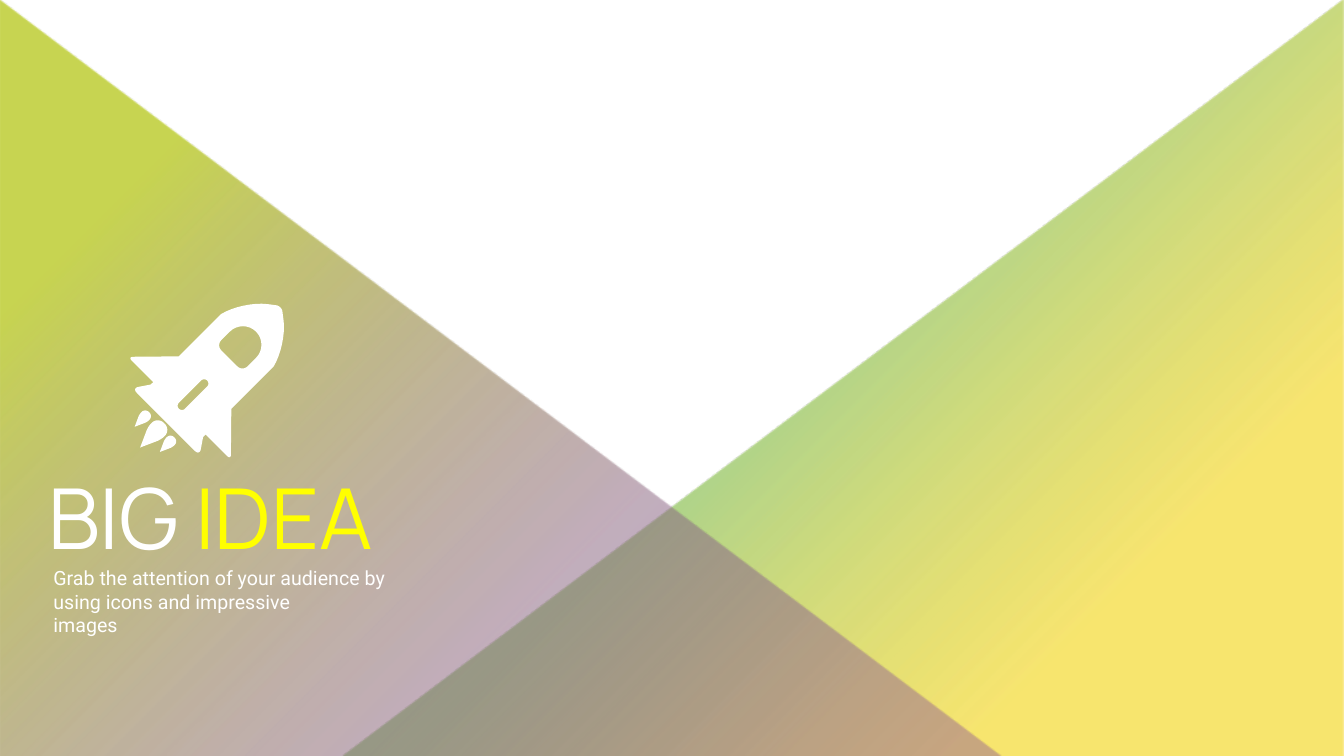
from dataclasses import dataclass
from math import dist

from lxml import etree
from pptx import Presentation
from pptx.dml.color import RGBColor
from pptx.enum.shapes import MSO_SHAPE
from pptx.enum.text import MSO_ANCHOR, MSO_AUTO_SIZE
from pptx.oxml.ns import qn
from pptx.util import Pt

TRIANGLE = MSO_SHAPE.RIGHT_TRIANGLE
BOTTOM, TOP = MSO_ANCHOR.BOTTOM, MSO_ANCHOR.TOP
FIT_SHAPE, FIT_NONE = MSO_AUTO_SIZE.SHAPE_TO_FIT_TEXT, MSO_AUTO_SIZE.NONE

WHITE = RGBColor(0xFF, 0xFF, 0xFF)
BRIGHT_YELLOW = RGBColor(0xFF, 0xFF, 0x00)
GOLD = RGBColor(0xF3, 0xD2, 0x0A)
BLUE = RGBColor(0x00, 0xB0, 0xF0)
PURPLE = RGBColor(0x70, 0x30, 0xA0)
LIME = RGBColor(0xC0, 0xCF, 0x3A)

SLIDE_W, SLIDE_H = 960, 540
TRIANGLE_W = 715.4
INSET = Pt(7.2)

AXIS_ORIGIN = 209.88  # x and y of the point the rocket's 45° axis starts from
ROCKET_UNIT = 0.36    # x and y step of one rocket unit
ARC_STEPS = 8         # straight pieces per rounded corner
ARC_PULL = 0.55       # Bezier handle length that makes a round corner


@dataclass
class Stop:
    position: float
    color: RGBColor
    opacity: int


@dataclass
class Triangle:
    left: float
    flipped: bool
    stops: list[Stop]


@dataclass
class Run:
    text: str
    color: RGBColor = WHITE


@dataclass
class TextBlock:
    box: tuple[float, float, float, float]
    paragraphs: list[list[Run]]
    font: dict
    frame: dict
    spacing: float = 1.0


@dataclass
class Corner:
    along: float      # forward on the rocket's axis
    across: float     # sideways from the axis
    reach: float = 0  # how far the rounding runs along each side


@dataclass
class Flame:
    front: float
    across: float
    scale: float


TRIANGLES = [
    Triangle(SLIDE_W - TRIANGLE_W, True, [Stop(0.22, GOLD, 58), Stop(1, BLUE, 100)]),
    Triangle(0, False, [Stop(0.12, PURPLE, 34), Stop(0.82, LIME, 88)]),
]
TEXTS = [
    TextBlock((27.4, 337, 264.2, 75.6),
              [[Run("BIG "), Run("IDEA", BRIGHT_YELLOW)]],
              {"name": "Manrope", "size": Pt(60)},
              {"vertical_anchor": BOTTOM, "auto_size": FIT_NONE,
               "margin_left": INSET, "margin_right": INSET,
               "margin_top": INSET, "margin_bottom": INSET},
              0.9),
    TextBlock((31, 400.7, 279.4, 58.3),
              [[Run("Grab the attention of your audience by using icons and impressive")],
               [Run("images")]],
              {"name": "Roboto", "size": Pt(14)},
              {"vertical_anchor": TOP, "auto_size": FIT_SHAPE}),
]

# One half of each rocket part; the other half is its mirror image
TIP, NOSE, SHOULDER = Corner(-24, 0, 8), Corner(-58, -44, 35), Corner(-92, -52)
FIN_ROOT, FIN_TIP, FIN_END = Corner(-176, -52), Corner(-227, -102, 7), Corner(-227, -52)
NOZZLE_ROOT, NOZZLE_TIP = Corner(-232, -52), Corner(-254, -67, 9)
HULL = [TIP, NOSE, SHOULDER, FIN_ROOT, FIN_TIP, FIN_END, NOZZLE_ROOT, NOZZLE_TIP]
WINDOW = [Corner(-75, -26, 26), Corner(-128, -26, 10)]
SLOT = [Corner(-172, -6, 6), Corner(-228, -6, 6)]
FLAME = [Corner(0, -13, 12), Corner(-19, -13, 6), Corner(-48, 0)]
FLAMES = [Flame(-257, 0, 1), Flame(-261, -26, 0.6), Flame(-261, 24, 0.6)]


def set_format(target, values: dict) -> None:
    for name, value in values.items():
        setattr(target, name, value)


def add_triangle(s, tri: Triangle) -> None:
    sp = s.shapes.add_shape(TRIANGLE, Pt(tri.left), 0, Pt(TRIANGLE_W), Pt(SLIDE_H))
    sp.shadow.inherit = False
    sp.line.fill.background()
    if tri.flipped:
        sp._element.spPr.xfrm.set("flipH", "1")
    sp.fill.gradient()
    grad = sp._element.spPr.find(qn("a:gradFill"))
    for stop, wanted in zip(sp.fill.gradient_stops, tri.stops):
        set_format(stop, {"position": wanted.position})
        stop.color.rgb = wanted.color
    for color, wanted in zip(grad.iter(qn("a:srgbClr")), tri.stops):
        etree.SubElement(color, qn("a:alpha"), val=str(wanted.opacity * 1000))
    # Spread the colours from the bottom right corner
    grad.remove(grad.find(qn("a:lin")))
    circle = etree.SubElement(grad, qn("a:path"), path="circle")
    etree.SubElement(circle, qn("a:fillToRect"), l="100000", t="100000")
    etree.SubElement(grad, qn("a:tileRect"), r="-100000", b="-100000")


def add_text(s, block: TextBlock) -> None:
    tf = s.shapes.add_textbox(*map(Pt, block.box)).text_frame
    tf.word_wrap = True
    set_format(tf, block.frame)
    for i, runs in enumerate(block.paragraphs):
        p = tf.add_paragraph() if i else tf.paragraphs[0]
        p.line_spacing = block.spacing
        for run in runs:
            r = p.add_run()
            r.text = run.text
            set_format(r.font, block.font)
            r.font.color.rgb = run.color


def mirrored(half: list[Corner]) -> list[Corner]:
    return half + [Corner(c.along, -c.across, c.reach) for c in reversed(half) if c.across]


def blend(a: tuple, b: tuple, t: float) -> tuple:
    return tuple(m + (n - m) * t for m, n in zip(a, b))


def rounded(corners: list[Corner]) -> list[tuple]:
    """Points of the outline, each corner replaced by a Bezier arc."""
    spots = [(c.along, c.across) for c in corners]
    points = []
    for i, (corner, spot) in enumerate(zip(corners, spots)):
        if not corner.reach:
            points.append(spot)
            continue
        before, after = spots[i - 1], spots[(i + 1) % len(spots)]
        start, end = (blend(spot, near, corner.reach / dist(spot, near))
                      for near in (before, after))
        pull_in, pull_out = blend(start, spot, ARC_PULL), blend(end, spot, ARC_PULL)
        for step in range(ARC_STEPS + 1):
            t = step / ARC_STEPS
            curve = [start, pull_in, pull_out, end]
            while len(curve) > 1:
                curve = [blend(a, b, t) for a, b in zip(curve, curve[1:])]
            points.append(curve[0])
    return points


def on_slide(point: tuple) -> tuple:
    along, across = point
    return (Pt(AXIS_ORIGIN + ROCKET_UNIT * (across + along)),
            Pt(AXIS_ORIGIN + ROCKET_UNIT * (across - along)))


def add_part(group, *halves: list[Corner]) -> None:
    contours = [[on_slide(pt) for pt in rounded(mirrored(half))] for half in halves]
    builder = group.shapes.build_freeform(*contours[0][0])
    for i, points in enumerate(contours):
        if i:
            builder.move_to(*points[0])
        builder.add_line_segments(points[1:], close=True)
    paint_white(builder.convert_to_shape())


def add_flame(group, flame: Flame) -> None:
    corners = [Corner(flame.front + c.along * flame.scale, flame.across + c.across * flame.scale,
                      c.reach * flame.scale) for c in mirrored(FLAME)]
    points = [on_slide(pt) for pt in rounded(corners)]
    builder = group.shapes.build_freeform(*points[0])
    builder.add_line_segments(points[1:], close=True)
    paint_white(builder.convert_to_shape())


def paint_white(sp) -> None:
    sp.shadow.inherit = False
    sp.fill.solid()
    sp.fill.fore_color.rgb = WHITE
    sp.line.fill.background()


prs = Presentation()
prs.slide_width, prs.slide_height = Pt(SLIDE_W), Pt(SLIDE_H)
s = prs.slides.add_slide(prs.slide_layouts[6])
for tri in TRIANGLES:
    add_triangle(s, tri)
for block in TEXTS:
    add_text(s, block)
rocket = s.shapes.add_group_shape()
add_part(rocket, HULL, WINDOW, SLOT)
for flame in FLAMES:
    add_flame(rocket, flame)
prs.save("out.pptx")
